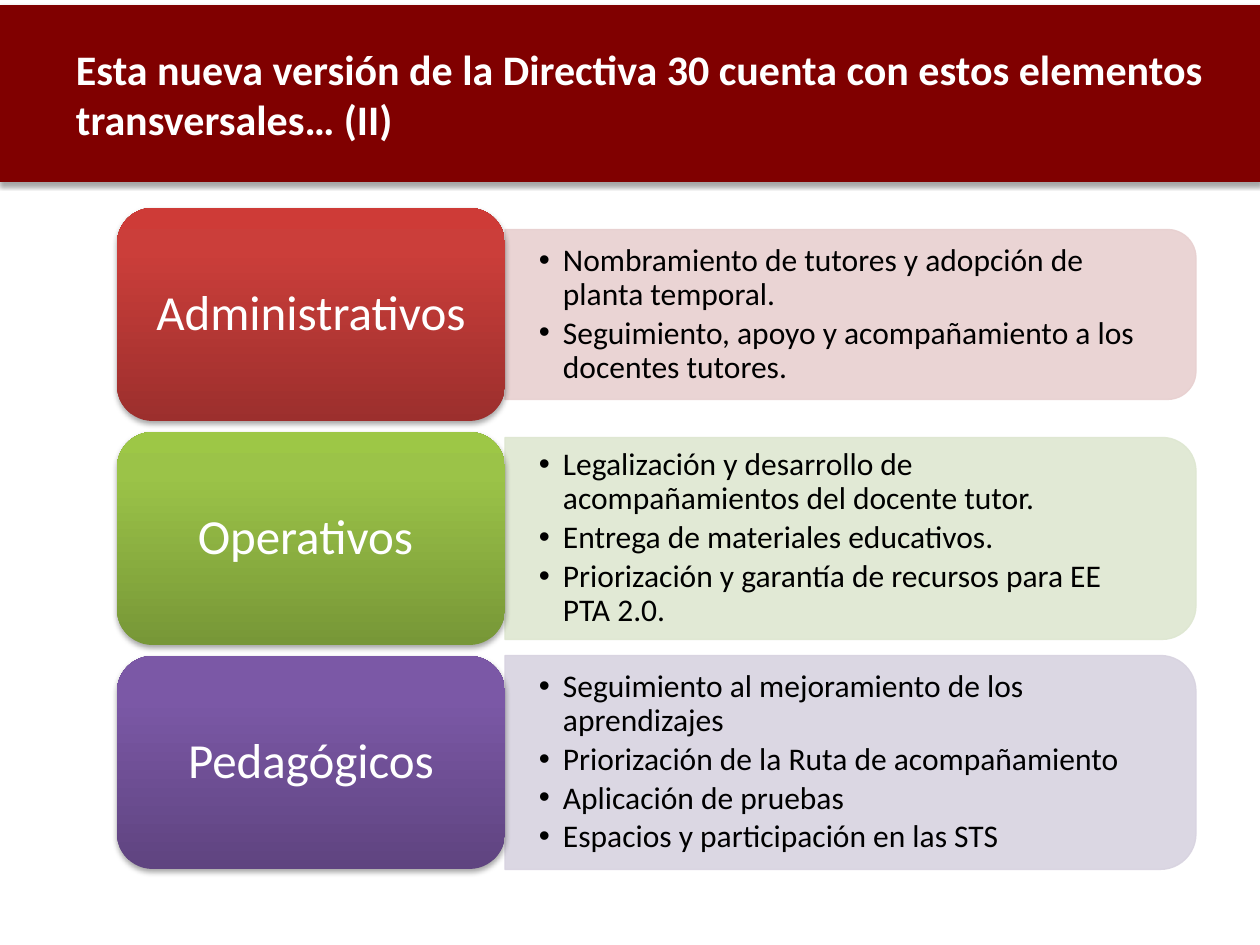
from copy import deepcopy
from dataclasses import dataclass

from pptx import Presentation
from pptx.dml.color import RGBColor
from pptx.enum.shapes import MSO_SHAPE
from pptx.enum.text import MSO_ANCHOR, MSO_AUTO_SIZE, PP_ALIGN
from pptx.oxml.ns import qn
from pptx.oxml.xmlchemy import OxmlElement
from pptx.util import Pt

ROUND, TAB = MSO_SHAPE.ROUNDED_RECTANGLE, MSO_SHAPE.ROUND_2_SAME_RECTANGLE
MIDDLE, NO_FIT = MSO_ANCHOR.MIDDLE, MSO_AUTO_SIZE.NONE
LEFT, CENTER = PP_ALIGN.LEFT, PP_ALIGN.CENTER
SCALE = 914400 / 126


@dataclass(frozen=True)
class Theme:
    face: str = "Calibri"
    band: str = "800000"
    light: str = "FFFFFF"
    dark: str = "000000"
    head: int = 24
    label: int = 28
    item: int = 18


THEME = Theme()
ROWS = [
    ("Administrativos", 170, "E8D0D0", ("9C2F2D", "CB3E3A", "CE3B37"), [
        "Nombramiento de tutores y adopción de planta temporal.",
        "Seguimiento, apoyo y acompañamiento a los docentes tutores.",
    ]),
    ("Operativos ", 202, "DEE7D1", ("779737", "9BC348", "9DC746"), [
        "Legalización y desarrollo de acompañamientos del docente tutor.",
        "Entrega de materiales educativos.",
        "Priorización y garantía de recursos para EE PTA 2.0.",
    ]),
    ("Pedagógicos", 214, "D8D3E0", ("5F4480", "7B58A6", "7C57A8"), [
        "Seguimiento al mejoramiento de los aprendizajes",
        "Priorización de la Ruta de acompañamiento",
        "Aplicación de pruebas",
        "Espacios y participación en las STS",
    ]),
]


def px(n):
    return round(n * SCALE)


def rgb(code):
    return RGBColor.from_string(code)


def apply(obj, **vals):
    for key, val in vals.items():
        setattr(obj, key, val)


def place(shape, x, y, w, h):
    apply(shape, left=px(x), top=px(y), width=px(w), height=px(h))


def add_node(parent, tag, **vals):
    node = OxmlElement(tag)
    for key, val in vals.items():
        node.set(key, str(val))
    parent.append(node)
    return node


def add_shadow(shape):
    shape.shadow.inherit = False
    effects = shape._element.spPr.find(qn("a:effectLst"))
    outer = add_node(effects, "a:outerShdw", blurRad=40000, dist=23000,
                     dir=5400000, rotWithShape=0)
    color = add_node(outer, "a:srgbClr", val=THEME.dark)
    add_node(color, "a:alpha", val=35000)


def set_frame(shape, side, edge):
    apply(shape.text_frame, word_wrap=True, auto_size=NO_FIT,
          vertical_anchor=MIDDLE, margin_left=px(side), margin_right=px(side),
          margin_top=px(edge), margin_bottom=px(edge))


def set_text(para, text, size, color, bold=False, **vals):
    para.text = text
    apply(para, space_before=Pt(0), **vals)
    apply(para.font, name=THEME.face, size=Pt(size), bold=bold)
    para.font.color.rgb = rgb(color)


def draw_head(title, x, y, w, h):
    place(title, x, y, w, h)
    title.fill.solid()
    title.fill.fore_color.rgb = title.line.color.rgb = rgb(THEME.band)
    title.line.width = Pt(0.75)
    add_shadow(title)
    set_frame(title, 13, 6)
    title.text_frame.margin_left = px(76)
    set_text(title.text_frame.paragraphs[0],
             "Esta nueva versión de la Directiva 30 cuenta con estos "
             "elementos transversales… (II)",
             THEME.head, THEME.light, True, alignment=LEFT)


def draw_panel(slide, color, x, y, w, h):
    panel = slide.shapes.add_shape(TAB, 0, 0, 0, 0)
    place(panel, x + (w - h) / 2, y + (h - w) / 2, h, w)
    panel.rotation = 90
    panel.shadow.inherit = False
    panel.fill.solid()
    panel.fill.fore_color.rgb = panel.line.color.rgb = rgb(color)
    panel.line.width = Pt(0.75)
    for tint in panel._element.spPr.iter(qn("a:srgbClr")):
        add_node(tint, "a:alpha", val=90000)


def draw_list(slide, body, items, x, y, w, h):
    slide.shapes._spTree.append(body._element)
    place(body, x, y, w, h)
    set_frame(body, 34, 17)
    frame = body.text_frame
    for i, item in enumerate(items):
        para = frame.add_paragraph() if i else frame.paragraphs[0]
        props = para._p.get_or_add_pPr()
        props.set("marL", str(px(24)))
        props.set("indent", str(px(-24)))
        add_node(props, "a:buChar", char="•")
        set_text(para, item, THEME.item, THEME.dark, alignment=LEFT,
                 line_spacing=0.9, space_after=Pt(2.7))


def draw_label(slide, text, colors, x, y, w, h):
    label = slide.shapes.add_shape(ROUND, 0, 0, 0, 0)
    place(label, x, y, w, h)
    label.line.fill.background()
    label.fill.gradient()
    label.fill.gradient_angle = 90
    first = label._element.spPr.find(".//" + qn("a:gs"))
    first.addnext(deepcopy(first))
    for stop, color, spot in zip(label.fill.gradient_stops, colors, (0, 0.8, 1)):
        stop.color.rgb = rgb(color)
        stop.position = spot
    add_shadow(label)
    set_frame(label, 25, 18)
    set_text(label.text_frame.paragraphs[0], text, THEME.label, THEME.light,
             alignment=CENTER, line_spacing=0.9)


def draw_row(slide, body, row, x, y, w, h):
    text, tall, tint, colors, items = row
    wide = 388
    side, top = x + wide, y + (h - tall) / 2
    draw_panel(slide, tint, side, top, w - wide, tall)
    draw_list(slide, body, items, side, top + 9, w - wide - 9, tall - 18)
    draw_label(slide, text, colors, x, y, wide, h)


def main():
    deck = Presentation()
    apply(deck, slide_width=px(1260), slide_height=px(945))
    slide = deck.slides.add_slide(deck.slide_layouts[4])
    title, *bodies = slide.placeholders
    draw_head(title, 0, 6, 1260, 175)
    for i, (body, row) in enumerate(zip(bodies, ROWS)):
        draw_row(slide, body, row, 117, 208 + 224 * i, 1079, 213)
    for spare in bodies[len(ROWS):]:
        slide.shapes._spTree.remove(spare._element)
    deck.save("out.pptx")


if __name__ == "__main__":
    main()
